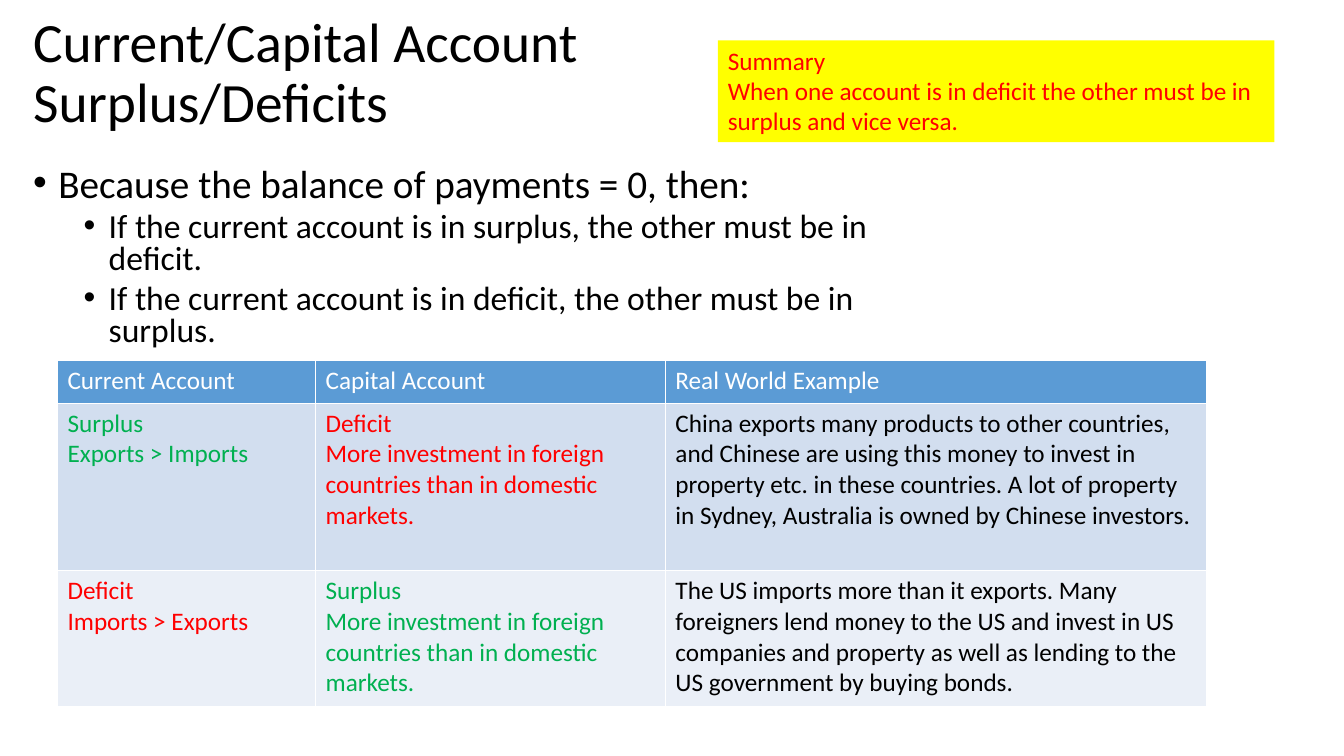
from dataclasses import dataclass
from typing import Any

import pptx
import pptx.dml.color
import pptx.enum.shapes
import pptx.enum.text
import pptx.oxml
import pptx.oxml.ns
import pptx.util

EMU_PER_PX = 9144  # 100 px to the inch
FONT = "Calibri"
COLOURS = {
    "black": "000000",
    "white": "FFFFFF",
    "deficit": "FF0000",
    "surplus": "00B050",
    "summary": "FFFF00",
    "header": "5B9BD5",
    "odd_row": "D2DEEF",
    "even_row": "EAEFF7",
}


@dataclass(frozen=True)
class Box:
    left: int
    top: int
    width: int
    height: int

    def emu(self) -> tuple[int, ...]:
        return tuple(px(n) for n in (self.left, self.top, self.width, self.height))


@dataclass(frozen=True)
class Bullet:
    text: str
    size: int
    indent: int
    space_before: int
    level: int = 0


@dataclass(frozen=True)
class Entry:
    """The lines of one table cell and their colour."""
    lines: tuple[str, ...]
    colour: str


@dataclass(frozen=True)
class Row:
    height: int
    fill: str
    entries: tuple[Entry, ...]


INVESTMENT = "More investment in foreign countries than in domestic markets."
COLUMN_WIDTHS = (256, 347, 537)
ROWS = (
    Row(42, "header", (
        Entry(("Current Account",), "white"),
        Entry(("Capital Account",), "white"),
        Entry(("Real World Example",), "white"),
    )),
    Row(166, "odd_row", (
        Entry(("Surplus", "Exports > Imports"), "surplus"),
        Entry(("Deficit", INVESTMENT), "deficit"),
        Entry(("China exports many products to other countries, and Chinese are "
               "using this money to invest in property etc. in these countries. "
               "A lot of property in Sydney, Australia is owned by Chinese "
               "investors.",), "black"),
    )),
    Row(135, "even_row", (
        Entry(("Deficit", "Imports > Exports"), "deficit"),
        Entry(("Surplus", INVESTMENT), "surplus"),
        Entry(("The US imports more than it exports. Many foreigners lend money "
               "to the US and invest in US companies and property as well as "
               "lending to the US government by buying bonds.",), "black"),
    )),
)
BULLETS = (
    Bullet("Because the balance of payments = 0, then:", 28, 25, 10),
    Bullet("If the current account is in surplus, the other must be in deficit.",
           24, 75, 5, 1),
    Bullet("If the current account is in deficit, the other must be in surplus.",
           24, 75, 5, 1),
)


def px(length: int) -> int:
    return length * EMU_PER_PX


def rgb(name: str) -> pptx.dml.color.RGBColor:
    return pptx.dml.color.RGBColor.from_string(COLOURS[name])


def add_run(paragraph: Any, text: str, size: float, colour: str) -> None:
    run = paragraph.add_run()
    run.text = text
    run.font.name = FONT
    run.font.size = pptx.util.Pt(size)
    run.font.bold = False
    run.font.color.rgb = rgb(colour)


def add_lines(frame: Any, lines: tuple[str, ...], size: float, colour: str) -> None:
    for index, line in enumerate(lines):
        paragraph = frame.add_paragraph() if index else frame.paragraphs[0]
        paragraph.alignment = pptx.enum.text.PP_ALIGN.LEFT
        add_run(paragraph, line, size, colour)


def add_title(slide: Any) -> None:
    frame = slide.shapes.add_textbox(*Box(23, 7, 661, 134).emu()).text_frame
    frame.word_wrap = True
    frame.vertical_anchor = pptx.enum.text.MSO_ANCHOR.MIDDLE
    add_lines(frame, ("Current/Capital Account Surplus/Deficits",), 39.6, "black")
    frame.paragraphs[0].line_spacing = 0.9


def add_bullets(slide: Any) -> None:
    frame = slide.shapes.add_textbox(*Box(23, 162, 872, 198).emu()).text_frame
    frame.word_wrap = True
    for index, bullet in enumerate(BULLETS):
        paragraph = frame.add_paragraph() if index else frame.paragraphs[0]
        paragraph.level = bullet.level
        paragraph.line_spacing = 0.8
        paragraph.space_before = pptx.util.Pt(bullet.space_before)
        add_run(paragraph, bullet.text, bullet.size, "black")
        properties = paragraph._p.get_or_add_pPr()
        properties.set("marL", str(px(bullet.indent)))
        properties.set("indent", str(px(-25)))
        for tag, attribute, value in (("buFont", "typeface", "Arial"),
                                      ("buChar", "char", "•")):
            mark = pptx.oxml.parse_xml(
                f'<a:{tag} {pptx.oxml.ns.nsdecls("a")} {attribute}="{value}"/>')
            properties.append(mark)


def set_borders(cell: Any, colour: str) -> None:
    properties = cell._tc.get_or_add_tcPr()
    for index, side in enumerate("LRTB"):
        border = pptx.oxml.parse_xml(
            f'<a:ln{side} {pptx.oxml.ns.nsdecls("a")} w="12700"><a:solidFill>'
            f'<a:srgbClr val="{COLOURS[colour]}"/></a:solidFill></a:ln{side}>')
        properties.insert(index, border)


def add_accounts_table(slide: Any) -> None:
    place = Box(57, 358, sum(COLUMN_WIDTHS), sum(row.height for row in ROWS))
    accounts = slide.shapes.add_table(
        len(ROWS), len(COLUMN_WIDTHS), *place.emu()).table
    for column, width in zip(accounts.columns, COLUMN_WIDTHS):
        column.width = px(width)
    for row_index, row in enumerate(ROWS):
        accounts.rows[row_index].height = px(row.height)
        for column_index, entry in enumerate(row.entries):
            cell = accounts.cell(row_index, column_index)
            cell.fill.solid()
            cell.fill.fore_color.rgb = rgb(row.fill)
            set_borders(cell, "white")
            add_lines(cell.text_frame, entry.lines, 18, entry.colour)


def add_summary(slide: Any) -> None:
    summary = slide.shapes.add_shape(
        pptx.enum.shapes.MSO_SHAPE.RECTANGLE, *Box(712, 40, 552, 101).emu())
    summary.shadow.inherit = False
    summary.fill.solid()
    summary.fill.fore_color.rgb = rgb("summary")
    summary.line.fill.background()
    frame = summary.text_frame
    frame.word_wrap = True
    frame.vertical_anchor = pptx.enum.text.MSO_ANCHOR.TOP
    frame.auto_size = pptx.enum.text.MSO_AUTO_SIZE.SHAPE_TO_FIT_TEXT
    add_lines(frame, (
        "Summary",
        "When one account is in deficit the other must be in surplus and vice versa.",
    ), 18, "deficit")


def main() -> None:
    deck = pptx.Presentation()
    deck.slide_width, deck.slide_height = px(1333), px(750)
    slide = deck.slides.add_slide(deck.slide_layouts[6])
    add_title(slide)
    add_bullets(slide)
    add_accounts_table(slide)
    add_summary(slide)
    deck.save("out.pptx")


if __name__ == "__main__":
    main()
